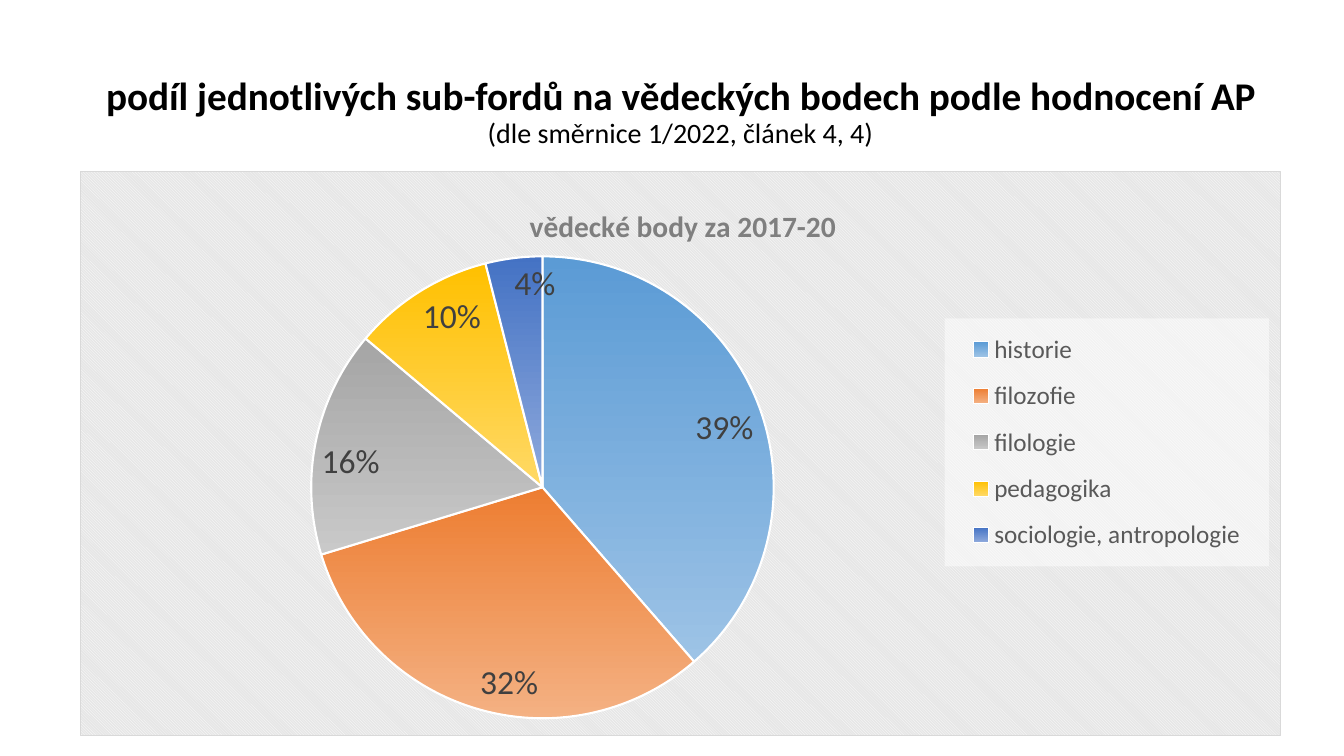
from lxml.etree import fromstring
from pptx import Presentation
from pptx.chart.data import CategoryChartData
from pptx.dml.color import RGBColor
from pptx.enum.chart import XL_CHART_TYPE, XL_LABEL_POSITION, XL_LEGEND_POSITION
from pptx.enum.text import MSO_ANCHOR, MSO_AUTO_SIZE, PP_ALIGN
from pptx.oxml.ns import nsdecls, qn
from pptx.util import Inches, Pt

SHARES = [
    ("historie", 39, "5B9BD5", "9DC3E6"),
    ("filozofie", 32, "ED7D31", "F4B183"),
    ("filologie", 16, "A5A5A5", "C9C9C9"),
    ("pedagogika", 10, "FFC000", "FFD966"),
    ("sociologie, antropologie", 4, "4472C4", "8FAADC"),
]
PANEL = """<a:pattFill prst="dkDnDiag">
  <a:fgClr><a:srgbClr val="FFFFFF"/></a:fgClr>
  <a:bgClr><a:srgbClr val="E6E6E6"/></a:bgClr>
</a:pattFill>
<a:ln w="9525"><a:solidFill><a:srgbClr val="D9D9D9"/></a:solidFill></a:ln>"""
VEIL = """<a:solidFill><a:srgbClr val="FFFFFF"><a:alpha val="50000"/></a:srgbClr></a:solidFill>
<a:ln><a:noFill/></a:ln>"""


def color(text):
    return RGBColor.from_string(text)


def node(tag, body):
    return fromstring(f"<c:{tag} {nsdecls('c', 'a')}>{body}</c:{tag}>")


def layout(x, y, w=None, h=None, inner=False):
    target = '<c:layoutTarget val="inner"/>' if inner else ""
    modes = '<c:xMode val="edge"/><c:yMode val="edge"/>'
    sizes = zip("xywh", (x, y, w, h))
    parts = "".join(f'<c:{k} val="{v}"/>' for k, v in sizes if v is not None)
    return node("layout", f"<c:manualLayout>{target}{modes}{parts}</c:manualLayout>")


class Page:
    face = "Calibri"

    def __init__(self, deck):
        self.slide = deck.slides.add_slide(deck.slide_layouts[5])

    def style(self, font, size, shade, bold=False):
        font.name = self.face
        font.size = Pt(size)
        font.bold = bold
        font.color.rgb = color(shade)

    def title(self, box, head, note):
        shape = self.slide.shapes.title
        shape.left, shape.top, shape.width, shape.height = map(Inches, box)
        frame = shape.text_frame
        frame.text = f"{head}\v{note}"
        frame.word_wrap = True
        frame.auto_size = MSO_AUTO_SIZE.NONE
        frame.vertical_anchor = MSO_ANCHOR.MIDDLE
        line = frame.paragraphs[0]
        line.alignment = PP_ALIGN.CENTER
        line.line_spacing = 0.9
        for run, size, bold in zip(line.runs, (28, 20), (True, False)):
            self.style(run.font, size, "000000", bold)

    def pie(self, box, head, shares):
        data = CategoryChartData()
        data.categories = [name for name, *_ in shares]
        data.add_series(head, [value for _, value, *_ in shares])
        frame = self.slide.shapes.add_chart(XL_CHART_TYPE.PIE, *map(Inches, box), data)
        chart = frame.chart
        self.style(chart.font, 10, "000000")
        self.caption(chart, head)
        self.legend(chart)
        self.slices(chart.plots[0], shares)
        space = chart._chartSpace
        space.find(qn("c:chart")).addnext(node("spPr", PANEL))
        area = space.find(".//" + qn("c:plotArea"))
        for old in area.findall(qn("c:layout")):
            area.remove(old)
        area.insert(0, layout(0.19, 0.15, 0.39, 0.82, True))

    def place(self, part, spot):
        for old in part.findall(qn("c:layout")):
            part.remove(old)
        part.find(qn("c:overlay")).addprevious(spot)

    def caption(self, chart, head):
        chart.has_title = True
        title = chart.chart_title
        title.text_frame.text = head
        self.style(title.text_frame.paragraphs[0].runs[0].font, 21, "7F7F7F", True)
        self.place(title._element, layout(0.37, 0.05))

    def legend(self, chart):
        chart.has_legend = True
        legend = chart.legend
        legend.position = XL_LEGEND_POSITION.RIGHT
        legend.include_in_layout = False
        self.style(legend.font, 18, "595959")
        part = legend._element
        self.place(part, layout(0.72, 0.26, 0.27, 0.44))
        part.find(qn("c:overlay")).addnext(node("spPr", VEIL))

    def slices(self, plot, shares):
        plot.vary_by_categories = True
        for i, (_, _, dark, light) in enumerate(shares):
            form = plot.series[0].points[i].format
            form.fill.gradient()
            form.fill.gradient_angle = 270
            for stop, shade, place in zip(form.fill.gradient_stops, (dark, light), (0, 1)):
                stop.color.rgb = color(shade)
                stop.position = place
            form.line.color.rgb = color("FFFFFF")
            form.line.width = Pt(1.5)
        plot.has_data_labels = True
        labels = plot.data_labels
        labels.show_value = False
        labels.show_percentage = True
        labels.number_format = "0%"
        labels.number_format_is_linked = False
        labels.position = XL_LABEL_POSITION.INSIDE_END
        self.style(labels.font, 24, "404040")


def main():
    deck = Presentation()
    deck.slide_width = Inches(13.33)
    deck.slide_height = Inches(7.5)
    page = Page(deck)
    page.title(
        (0.79, 0.4, 11.92, 1.45),
        "podíl jednotlivých sub-fordů na vědeckých bodech podle hodnocení AP",
        "(dle směrnice 1/2022, článek 4, 4)",
    )
    page.pie((0.79, 1.7, 11.92, 5.6), "vědecké body za 2017-20", SHARES)
    deck.save("out.pptx")


if __name__ == "__main__":
    main()
